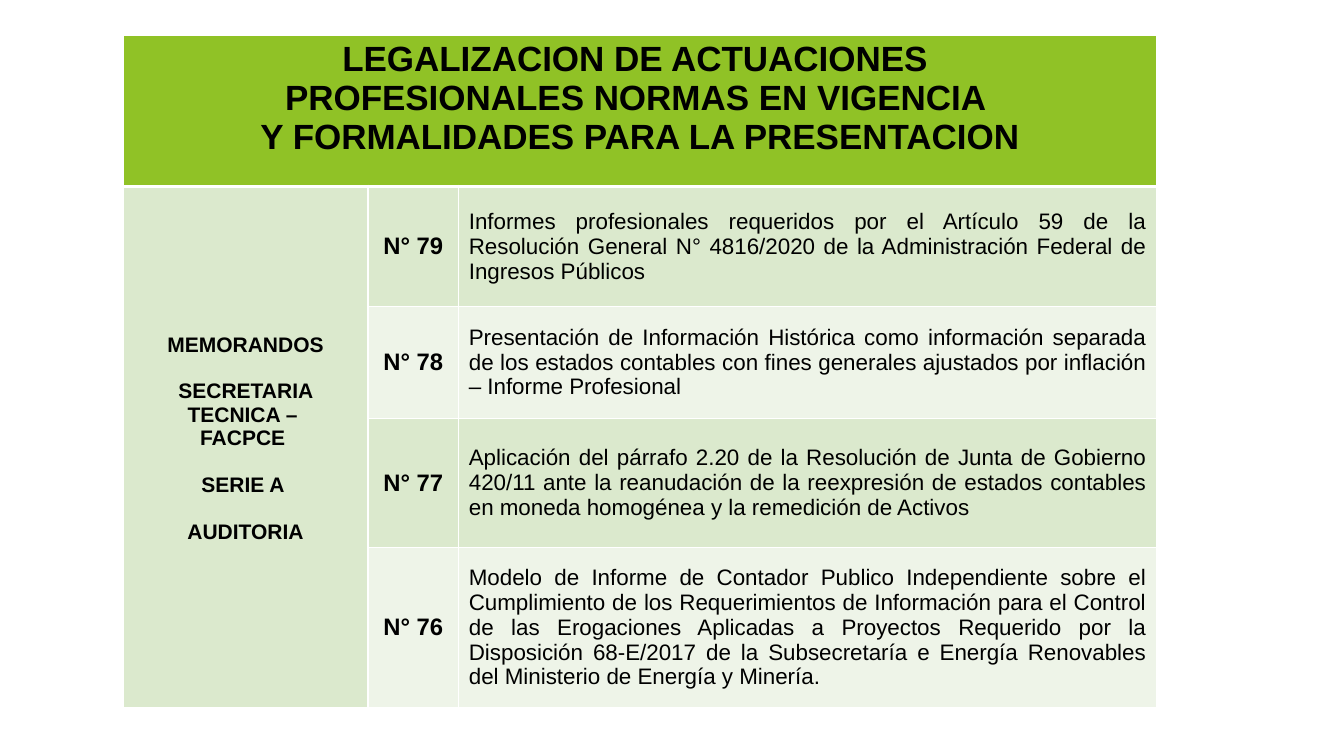
"""Build the slide listing the audit memoranda in force."""
from lxml.etree import SubElement
from pptx import Presentation
from pptx.dml.color import RGBColor as Rgb
from pptx.enum.text import MSO_ANCHOR as Anchor, PP_ALIGN as Align
from pptx.oxml.ns import qn
from pptx.util import Pt

PX = 9144
COLORS = {
    "header": "90C226",
    "band_dark": "DBE9CD",
    "band_light": "EEF4E8",
    "rule": "FFFFFF",
    "text": "000000",
}
COLUMN_WIDTHS = [243, 90, 692]
ROW_HEIGHTS = [150, 119, 111, 128, 159]
HEADING = [
    "LEGALIZACION DE ACTUACIONES ",
    "PROFESIONALES NORMAS EN VIGENCIA ",
    "Y FORMALIDADES PARA LA PRESENTACION",
]
SERIES = [
    ("MEMORANDOS", 0),
    ("SECRETARIA TECNICA – ", 1),
    ("FACPCE ", 0),
    ("SERIE A ", 1),
    ("AUDITORIA", 1),
]
MEMORANDA = [
    ("N° 79", "Informes profesionales requeridos por el Artículo 59 de la Resolución "
              "General N° 4816/2020 de la Administración Federal de Ingresos Públicos"),
    ("N° 78", "Presentación de Información Histórica como información separada de los "
              "estados contables con fines generales ajustados por inflación – Informe "
              "Profesional"),
    ("N° 77", "Aplicación del párrafo 2.20 de la Resolución de Junta de Gobierno 420/11 "
              "ante la reanudación de la reexpresión de estados contables en moneda "
              "homogénea y la remedición de Activos"),
    ("N° 76", "Modelo de Informe de Contador Publico Independiente sobre el Cumplimiento "
              "de los Requerimientos de Información para el Control de las Erogaciones "
              "Aplicadas a Proyectos Requerido por la Disposición 68-E/2017 de la "
              "Subsecretaría e Energía Renovables del Ministerio de Energía y Minería."),
]


def px(length):
    return length * PX


def write(frame, text, *, size, bold=True, align=Align.CENTER, gap=0, first=True):
    paragraph = frame.paragraphs[0] if first else frame.add_paragraph()
    paragraph.text = text
    paragraph.alignment = align
    if gap:
        paragraph.space_before = Pt(gap)
    paragraph.font.name = "Arial"
    paragraph.font.size = Pt(size)
    paragraph.font.bold = bold
    for run in paragraph.runs:
        run.font.name = "Arial"
        run.font.size = Pt(size)
        run.font.bold = bold
        run.font.color.rgb = Rgb.from_string(COLORS["text"])


def draw_borders(cell, **widths):
    properties = cell._tc.get_or_add_tcPr()
    for side in "LRTB":
        width = Pt(widths.get(side, 1))
        line = SubElement(properties, qn(f"a:ln{side}"), w=str(width))
        fill = SubElement(line, qn("a:solidFill"))
        SubElement(fill, qn("a:srgbClr"), val=COLORS["rule"])


def paint(cell, color):
    cell.fill.solid()
    cell.fill.fore_color.rgb = Rgb.from_string(COLORS[color])


def add_grid(slide):
    grid = slide.shapes.add_table(
        len(ROW_HEIGHTS), len(COLUMN_WIDTHS), px(122), px(35),
        px(sum(COLUMN_WIDTHS)), px(sum(ROW_HEIGHTS))).table
    grid.first_row = grid.horz_banding = False
    for column, width in zip(grid.columns, COLUMN_WIDTHS):
        column.width = px(width)
    for index, (row, height) in enumerate(zip(grid.rows, ROW_HEIGHTS)):
        row.height = px(height)
        band = "band_dark" if index % 2 else "band_light"
        for cell in row.cells:
            draw_borders(cell, T=3 if index == 1 else 1, B=1 if index else 3)
            paint(cell, band if index else "header")
    return grid


def fill_heading(grid):
    heading = grid.cell(0, 0)
    heading.merge(grid.cell(0, 2))
    for index, line in enumerate(HEADING):
        write(heading.text_frame, line, size=25, first=index == 0)


def fill_series(grid):
    series = grid.cell(1, 0)
    series.merge(grid.cell(len(MEMORANDA), 0))
    series.vertical_anchor = Anchor.MIDDLE
    series.margin_bottom = px(22)
    for index, (line, lines_before) in enumerate(SERIES):
        write(series.text_frame, line, size=15, gap=16.8 * lines_before, first=index == 0)


def fill_memoranda(grid):
    for row, (number, subject) in enumerate(MEMORANDA, start=1):
        number_cell, subject_cell = grid.cell(row, 1), grid.cell(row, 2)
        number_cell.vertical_anchor = subject_cell.vertical_anchor = Anchor.MIDDLE
        write(number_cell.text_frame, number, size=17)
        write(subject_cell.text_frame, subject, size=16, bold=False, align=Align.JUSTIFY)


def main():
    deck = Presentation()
    deck.slide_width, deck.slide_height = px(1333), px(750)
    slide = deck.slides.add_slide(deck.slide_layouts[6])
    grid = add_grid(slide)
    fill_heading(grid)
    fill_series(grid)
    fill_memoranda(grid)
    deck.save("out.pptx")


if __name__ == "__main__":
    main()
